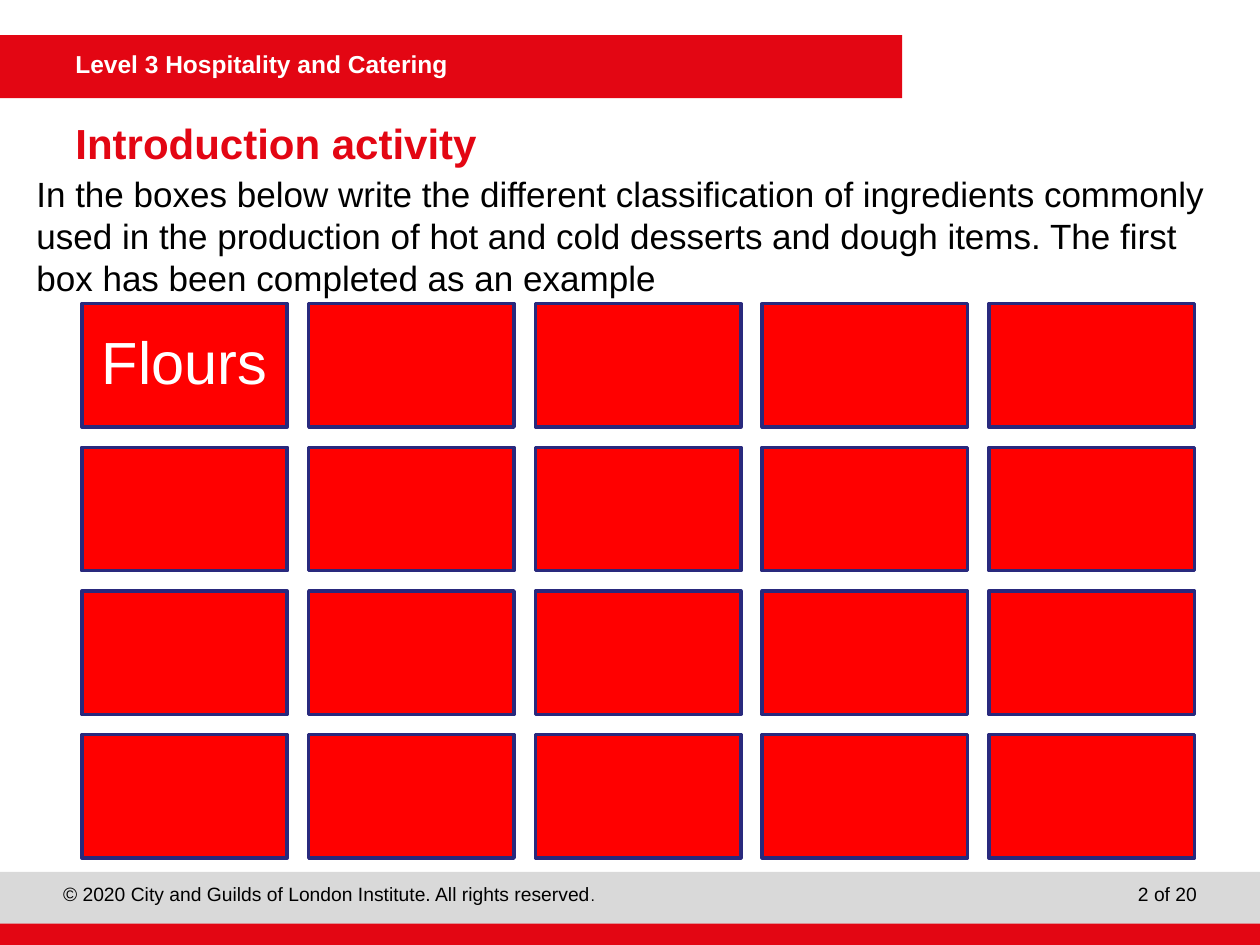
from pptx import Presentation
from pptx.dml.color import RGBColor
from pptx.enum.shapes import MSO_SHAPE
from pptx.enum.text import MSO_ANCHOR, PP_ALIGN
from pptx.util import Inches, Pt

RECTANGLE = MSO_SHAPE.RECTANGLE
TOP, MIDDLE = MSO_ANCHOR.TOP, MSO_ANCHOR.MIDDLE
LEFT, CENTER, RIGHT = PP_ALIGN.LEFT, PP_ALIGN.CENTER, PP_ALIGN.RIGHT

BRAND_RED = RGBColor(0xE3, 0x06, 0x13)
BOX_RED = RGBColor(0xFF, 0x00, 0x00)
NAVY = RGBColor(0x29, 0x29, 0x7D)
GREY = RGBColor(0xD9, 0xD9, 0xD9)
WHITE = RGBColor(0xFF, 0xFF, 0xFF)
BLACK = RGBColor(0x00, 0x00, 0x00)
FONT = "Arial"

HEADER = "Level 3 Hospitality and Catering"
TITLE = "Introduction activity"
INSTRUCTION = (
    "In the boxes below write the different classification of ingredients "
    "commonly used in the production of hot and cold desserts and dough items. "
    "The first box has been completed as an example"
)
COPYRIGHT = "© 2020 City and Guilds of London Institute. All rights reserved"
PAGE_NUMBER = "2 of 20"
ANSWERS = ["Flours"]

BARS = [
    (0, 0.28, 7.16, 0.5, BRAND_RED),
    (0, 6.92, 10, 0.42, GREY),
    (0, 7.33, 10, 0.17, BRAND_RED),
]

COLUMNS, ROWS = 5, 4
GRID_LEFT, GRID_TOP = 0.65, 2.41
BOX_WIDTH, BOX_HEIGHT = 1.63, 0.98
COLUMN_STEP, ROW_STEP = 1.8, 1.14


def add_rectangle(page, left, top, width, height, fill, line=None):
    shape = page.shapes.add_shape(
        RECTANGLE, Inches(left), Inches(top), Inches(width), Inches(height))
    shape.shadow.inherit = False
    shape.fill.solid()
    shape.fill.fore_color.rgb = fill
    if line is None:
        shape.line.fill.background()
    else:
        shape.line.color.rgb = line
        shape.line.width = Pt(2)
    return shape


def write(frame, spans, color, bold=False, align=LEFT, anchor=TOP,
          margins=(0.1, 0.05), spacing=None):
    frame.word_wrap = True
    frame.vertical_anchor = anchor
    frame.margin_left = frame.margin_right = Inches(margins[0])
    frame.margin_top = frame.margin_bottom = Inches(margins[1])
    para = frame.paragraphs[0]
    para.alignment = align
    if spacing:
        para.line_spacing = spacing
    for text, size in spans:
        span = para.add_run()
        span.text = text
        span.font.name = FONT
        span.font.size = Pt(size)
        span.font.bold = bold
        span.font.color.rgb = color


def add_text(page, left, top, width, height, spans, color, **style):
    box = page.shapes.add_textbox(
        Inches(left), Inches(top), Inches(width), Inches(height))
    write(box.text_frame, spans, color, **style)


def main():
    deck = Presentation()
    deck.slide_width, deck.slide_height = Inches(10), Inches(7.5)
    page = deck.slides.add_slide(deck.slide_layouts[6])

    for bar in BARS:
        add_rectangle(page, *bar)

    add_text(page, 0.5, 0.34, 6.66, 0.34, [(HEADER, 14)], WHITE, bold=True)
    add_text(page, 0.5, 7, 7.08, 0.25, [(COPYRIGHT, 11), (".", 9)], BLACK,
             margins=(0, 0))
    add_text(page, 7.92, 7, 1.58, 0.25, [(PAGE_NUMBER, 11)], BLACK,
             align=RIGHT, margins=(0, 0))
    add_text(page, 0.5, 0.92, 8.99, 0.42, [(TITLE, 24)], BRAND_RED,
             bold=True, anchor=MIDDLE)
    add_text(page, 0.19, 1.32, 9.61, 4.95, [(INSTRUCTION, 20)], BLACK,
             spacing=Pt(24))

    for index in range(COLUMNS * ROWS):
        row, column = divmod(index, COLUMNS)
        box = add_rectangle(
            page, GRID_LEFT + column * COLUMN_STEP, GRID_TOP + row * ROW_STEP,
            BOX_WIDTH, BOX_HEIGHT, BOX_RED, NAVY)
        if index < len(ANSWERS):
            write(box.text_frame, [(ANSWERS[index], 34)], WHITE, align=CENTER,
                  anchor=MIDDLE, margins=(0.14, 0.14), spacing=0.9)

    deck.save("out.pptx")


if __name__ == "__main__":
    main()
